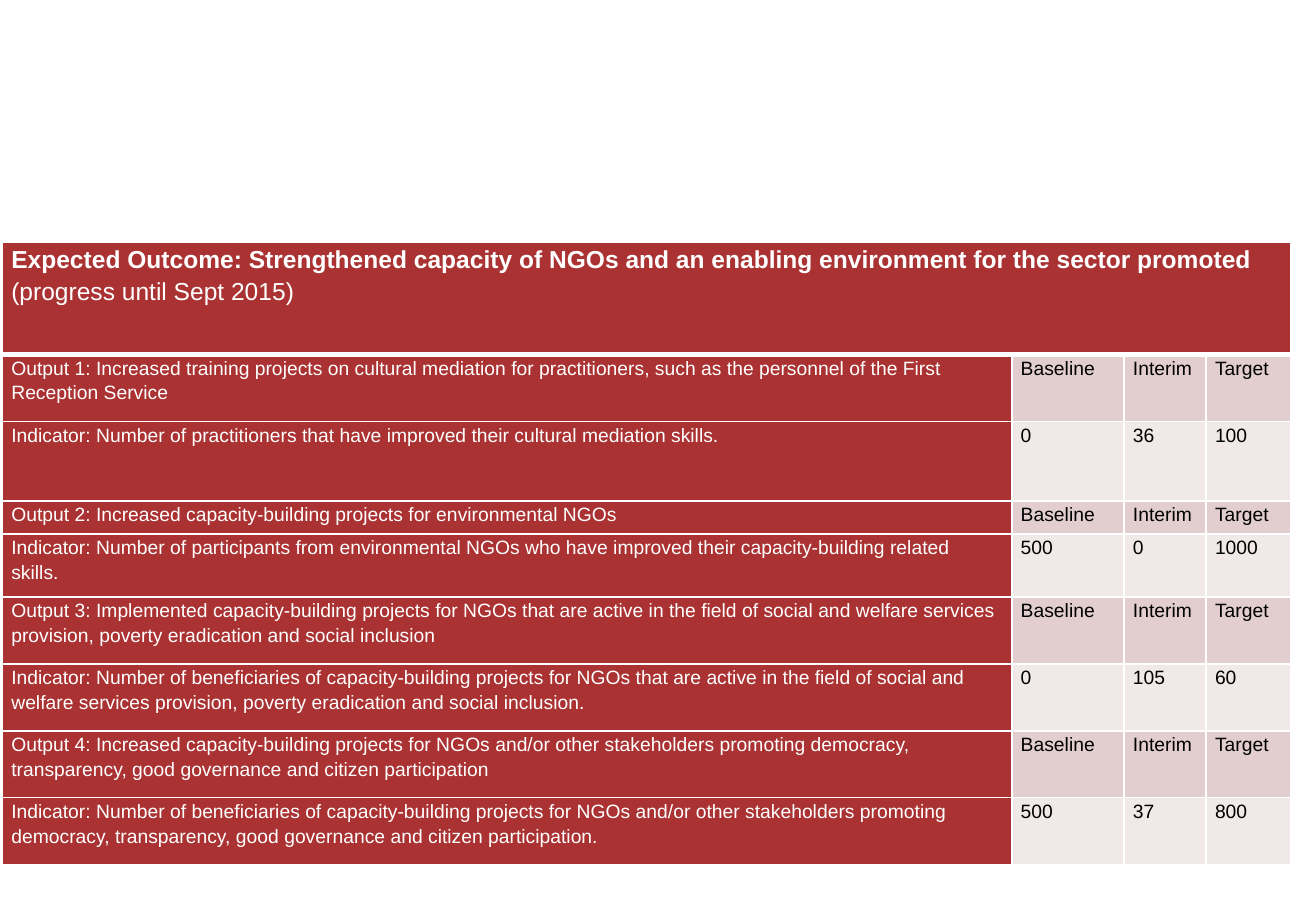
from lxml.etree import SubElement
from pptx import Presentation
from pptx.dml.color import RGBColor
from pptx.oxml.ns import qn
from pptx.util import Inches, Pt

COLORS = {
    "red": "AA3232",
    "label": "E2CECE",
    "value": "F1E8E8",
    "white": "FFFFFF",
    "black": "000000",
}
COL_WIDTHS = [8, 0.89, 0.65, 0.67]
ROW_HEIGHTS = [0.89, 0.53, 0.63, 0.26, 0.5] + [0.53] * 4
HEADING = "Expected Outcome: Strengthened capacity of NGOs and an enabling environment for the sector promoted "
PROGRESS = "(progress until Sept 2015)"
LABELS = ["Baseline", "Interim", "Target"]
OUTPUTS = [
    ("Output 1: Increased training projects on cultural mediation for practitioners, "
     "such as the personnel of the First Reception Service",
     "Indicator: Number of practitioners that have improved their cultural mediation skills.",
     [0, 36, 100]),
    ("Output 2: Increased capacity-building projects for environmental NGOs",
     "Indicator: Number of participants from environmental NGOs who have improved "
     "their capacity-building related skills.",
     [500, 0, 1000]),
    ("Output 3: Implemented capacity-building projects for NGOs that are active in the field "
     "of social and welfare services provision, poverty eradication and social inclusion",
     "Indicator: Number of beneficiaries of capacity-building projects for NGOs that are active "
     "in the field of social and welfare services provision, poverty eradication and social inclusion.",
     [0, 105, 60]),
    ("Output 4: Increased capacity-building projects for NGOs and/or other stakeholders "
     "promoting democracy, transparency, good governance and citizen participation",
     "Indicator: Number of beneficiaries of capacity-building projects for NGOs and/or other "
     "stakeholders promoting democracy, transparency, good governance and citizen participation.",
     [500, 37, 800]),
]


def set_borders(cell, bottom=1):
    """Draw white cell borders; call before filling, as lines precede the fill."""
    tcPr = cell._tc.get_or_add_tcPr()
    for side, width in (("L", 1), ("R", 1), ("T", 1), ("B", bottom)):
        ln = SubElement(tcPr, qn(f"a:ln{side}"), w=str(Pt(width)))
        fill = SubElement(ln, qn("a:solidFill"))
        SubElement(fill, qn("a:srgbClr"), val=COLORS["white"])


def format_cell(cell, texts, fill, color, size=11, bottom=1):
    set_borders(cell, bottom)
    cell.fill.solid()
    cell.fill.fore_color.rgb = RGBColor.from_string(COLORS[fill])
    cell.margin_left = cell.margin_right = Inches(0.07)
    cell.margin_top = cell.margin_bottom = 0
    p = cell.text_frame.paragraphs[0]
    p.line_spacing = 1.15
    p.space_after = Pt(10)
    p.font.name = "Arial"
    p.font.size = Pt(size)
    p.font.bold = False
    p.font.color.rgb = RGBColor.from_string(COLORS[color])
    for text in texts:
        p.add_run().text = text
    return p


def add_heading(table):
    cell = table.cell(0, 0)
    cell.merge(table.cell(0, len(COL_WIDTHS) - 1))
    p = format_cell(cell, [HEADING, PROGRESS], "red", "white", size=14, bottom=3)
    p.runs[0].font.bold = True


def add_row(table, row, description, entries, fill):
    format_cell(table.cell(row, 0), [description], "red", "white")
    for col, entry in enumerate(entries, 1):
        format_cell(table.cell(row, col), [str(entry)], fill, "black")


def add_outcome_table(slide):
    table = slide.shapes.add_table(
        len(ROW_HEIGHTS), len(COL_WIDTHS), Inches(0.02), Inches(1.92),
        Inches(sum(COL_WIDTHS)), Inches(sum(ROW_HEIGHTS))).table
    for column, width in zip(table.columns, COL_WIDTHS):
        column.width = Inches(width)
    for row, height in zip(table.rows, ROW_HEIGHTS):
        row.height = Inches(height)
    add_heading(table)
    for i, (output, indicator, values) in enumerate(OUTPUTS):
        add_row(table, 2 * i + 1, output, LABELS, "label")
        add_row(table, 2 * i + 2, indicator, values, "value")


def main():
    prs = Presentation()
    prs.slide_width, prs.slide_height = Inches(10.43), Inches(7.28)
    slide = prs.slides.add_slide(prs.slide_layouts[6])
    add_outcome_table(slide)
    prs.save("out.pptx")


if __name__ == "__main__":
    main()
